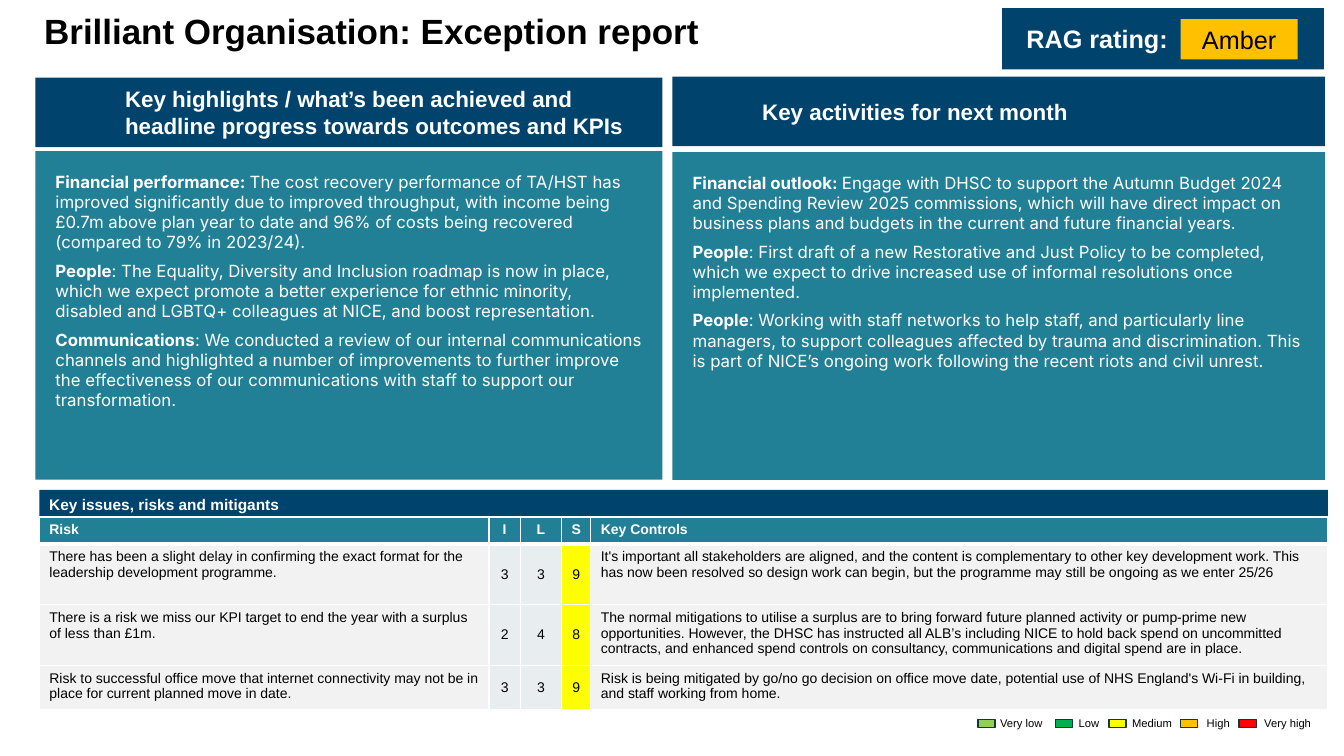
import pptx
import pptx.util
import pptx.dml.color
import pptx.enum.shapes
import pptx.enum.text
import pptx.oxml
import pptx.oxml.ns

THEME = {
    "head": "Arial", "body": "Inter",
    "navy": "00436C", "teal": "228096", "white": "FFFFFF", "black": "000000",
    "amber": "FFC000", "yellow": "FFFF00", "edge": "0F3842",
    "pale": "F2F2F2", "score": "E8EDEF",
    "title": 25, "rating": 18, "heading": 16, "text": 12, "band": 11, "cell": 10, "key": 8,
}

TITLE = "Brilliant Organisation: Exception report"
PANELS = [
    (0.35, 6.22, 0.77, 1.5,
     "Key highlights / what’s been achieved and headline progress towards outcomes and KPIs", [
         ("Financial performance: ", "The cost recovery performance of TA/HST has improved significantly due to improved throughput, with income being £0.7m above plan year to date and 96% of costs being recovered (compared to 79% in 2023/24)."),
         ("People", ": The Equality, Diversity and Inclusion roadmap is now in place, which we expect promote a better experience for ethnic minority, disabled and LGBTQ+ colleagues at NICE, and boost representation."),
         ("Communications", ": We conducted a review of our internal communications channels and highlighted a number of improvements to further improve the effectiveness of our communications with staff to support our transformation."),
     ]),
    (6.67, 6.47, 0.76, 1.51, "Key activities for next month", [
        ("Financial outlook: ", "Engage with DHSC to support the Autumn Budget 2024 and Spending Review 2025 commissions, which will have direct impact on business plans and budgets in the current and future financial years."),
        ("People", ": First draft of a new Restorative and Just Policy to be completed, which we expect to drive increased use of informal resolutions once implemented."),
        ("People", ": Working with staff networks to help staff, and particularly line managers, to support colleagues affected by trauma and discrimination. This is part of NICE’s ongoing work following the recent riots and civil unrest."),
    ]),
]
BAND = "Key issues, risks and mitigants"
RISKS = [
    ("Risk", "I", "L", "S", "Key Controls"),
    ("There has been a slight delay in confirming the exact format for the leadership development programme.",
     "3", "3", "9",
     "It's important all stakeholders are aligned, and the content is complementary to other key development work. This has now been resolved so design work can begin, but the programme may still be ongoing as we enter 25/26"),
    ("There is a risk we miss our KPI target to end the year with a surplus of less than £1m.",
     "2", "4", "8",
     "The normal mitigations to utilise a surplus are to bring forward future planned activity or pump-prime new opportunities. However, the DHSC has instructed all ALB’s including NICE to hold back spend on uncommitted contracts, and enhanced spend controls on consultancy, communications and digital spend are in place."),
    ("Risk to successful office move that internet connectivity may not be in place for current planned move in date.",
     "3", "3", "9",
     "Risk is being mitigated by go/no go decision on office move date, potential use of NHS England's Wi-Fi in building, and staff working from home."),
]
WIDTHS = [4.46, 0.31, 0.41, 0.29, 7.31]
HEIGHTS = [0.27, 0.6, 0.6, 0.43]
FILLS = ["pale", "score", "score", "yellow", "pale"]
LEGEND = [
    ("Very low", "92D050", 9.7, 9.82),
    ("Low", "00B050", 10.47, 10.6),
    ("Medium", "FFFF00", 11, 11.13),
    ("High", "FFC000", 11.71, 11.87),
    ("Very high", "FF0000", 12.29, 12.44),
]

Inches = pptx.util.Inches
Pt = pptx.util.Pt
ALIGN = pptx.enum.text.PP_ALIGN
ANCHOR = pptx.enum.text.MSO_ANCHOR


def shade(name):
    return pptx.dml.color.RGBColor.from_string(THEME.get(name, name))


def style(para, size, color, bold=None, face="head", align=ALIGN.LEFT):
    para.alignment = align
    para.font.size = Pt(THEME[size])
    para.font.name = THEME[face]
    para.font.color.rgb = shade(color)
    para.font.bold = bold


def block(slide, area, fill, line=None):
    shape = slide.shapes.add_shape(
        pptx.enum.shapes.MSO_SHAPE.RECTANGLE, *map(Inches, area))
    shape.shadow.inherit = False
    shape.fill.solid()
    shape.fill.fore_color.rgb = shade(fill)
    if line:
        shape.line.color.rgb = shade(line)
        shape.line.width = Pt(1)
    else:
        shape.line.fill.background()
    return shape


def inset(shape, left=0.1, top=0.05, right=0.1, anchor=ANCHOR.TOP):
    frame = shape.text_frame
    frame.word_wrap = True
    frame.vertical_anchor = anchor
    frame.margin_left, frame.margin_right = Inches(left), Inches(right)
    frame.margin_top = frame.margin_bottom = Inches(top)
    return frame


def label(slide, area, text, size, color, bold=None):
    frame = inset(slide.shapes.add_textbox(*map(Inches, area)))
    para = frame.paragraphs[0]
    para.text = text
    style(para, size, color, bold)
    return para


def panel(slide, left, width, top, start, heading, items):
    bar = block(slide, (left, top, width, 0.69), "navy")
    para = inset(bar, 0.89, anchor=ANCHOR.MIDDLE).paragraphs[0]
    para.text = heading
    style(para, "heading", "white", True)
    frame = inset(block(slide, (left, start, width, 4.76 - start), "teal"), 0.2, 0.2, 0.2)
    for num, item in enumerate(items):
        para = frame.add_paragraph() if num else frame.paragraphs[0]
        for text, bold in zip(item, (True, False)):
            run = para.add_run()
            run.text = text
            run.font.bold = bold
        para.space_after = Pt(6)
        style(para, "text", "white", face="body")


def border(cell, low):
    props = cell._tc.get_or_add_tcPr()
    for spot, (side, width) in enumerate((("L", 1), ("R", 1), ("T", 1), ("B", low))):
        props.insert(spot, pptx.oxml.parse_xml(
            f'<a:ln{side} {pptx.oxml.ns.nsdecls("a")} w="{Pt(width)}"><a:solidFill>'
            f'<a:srgbClr val="{THEME["white"]}"/></a:solidFill></a:ln{side}>'))


def grid(slide):
    table = slide.shapes.add_table(
        len(RISKS), len(WIDTHS), Inches(0.39), Inches(5.13),
        Inches(sum(WIDTHS)), Inches(sum(HEIGHTS))).table
    for col, width in zip(table.columns, WIDTHS):
        col.width = Inches(width)
    for row, (texts, height) in enumerate(zip(RISKS, HEIGHTS)):
        table.rows[row].height = Inches(height)
        for col, text in enumerate(texts):
            head, mid = row == 0, 0 < col < 4
            cell = table.cell(row, col)
            cell.fill.solid()
            cell.fill.fore_color.rgb = shade("teal" if head else FILLS[col])
            cell.vertical_anchor = ANCHOR.MIDDLE if mid and not head else ANCHOR.TOP
            para = cell.text_frame.paragraphs[0]
            para.text = text
            style(para, "cell", "white" if head else "black", head,
                  align=ALIGN.CENTER if mid else ALIGN.LEFT)
            border(cell, 3 if head else 1)


def main():
    deck = pptx.Presentation()
    deck.slide_width, deck.slide_height = Inches(13.33), Inches(7.5)
    slide = deck.slides.add_slide(deck.slide_layouts[6])

    for part in PANELS:
        panel(slide, *part)

    label(slide, (0.34, 0.09, 9.5, 0.82), TITLE, "title", "black", True).line_spacing = 0.9

    para = inset(block(slide, (9.94, 0.08, 3.19, 0.61), "navy"),
                 0.24, anchor=ANCHOR.MIDDLE).paragraphs[0]
    para.text = "RAG rating:"
    style(para, "rating", "white", True)
    para = inset(block(slide, (11.71, 0.19, 1.16, 0.4), "amber")).paragraphs[0]
    para.text = "Amber"
    style(para, "rating", "black", align=ALIGN.CENTER)

    block(slide, (0.39, 4.86, 12.78, 0.26), "navy")
    label(slide, (0.39, 4.86, 4.4, 0.29), BAND, "band", "white", True)
    grid(slide)

    for text, fill, box, left in LEGEND:
        label(slide, (left, 7.06, 0.7, 0.24), text, "key", "black")
        block(slide, (box, 7.14, 0.17, 0.08), fill, "edge")

    deck.save("out.pptx")


if __name__ == "__main__":
    main()
